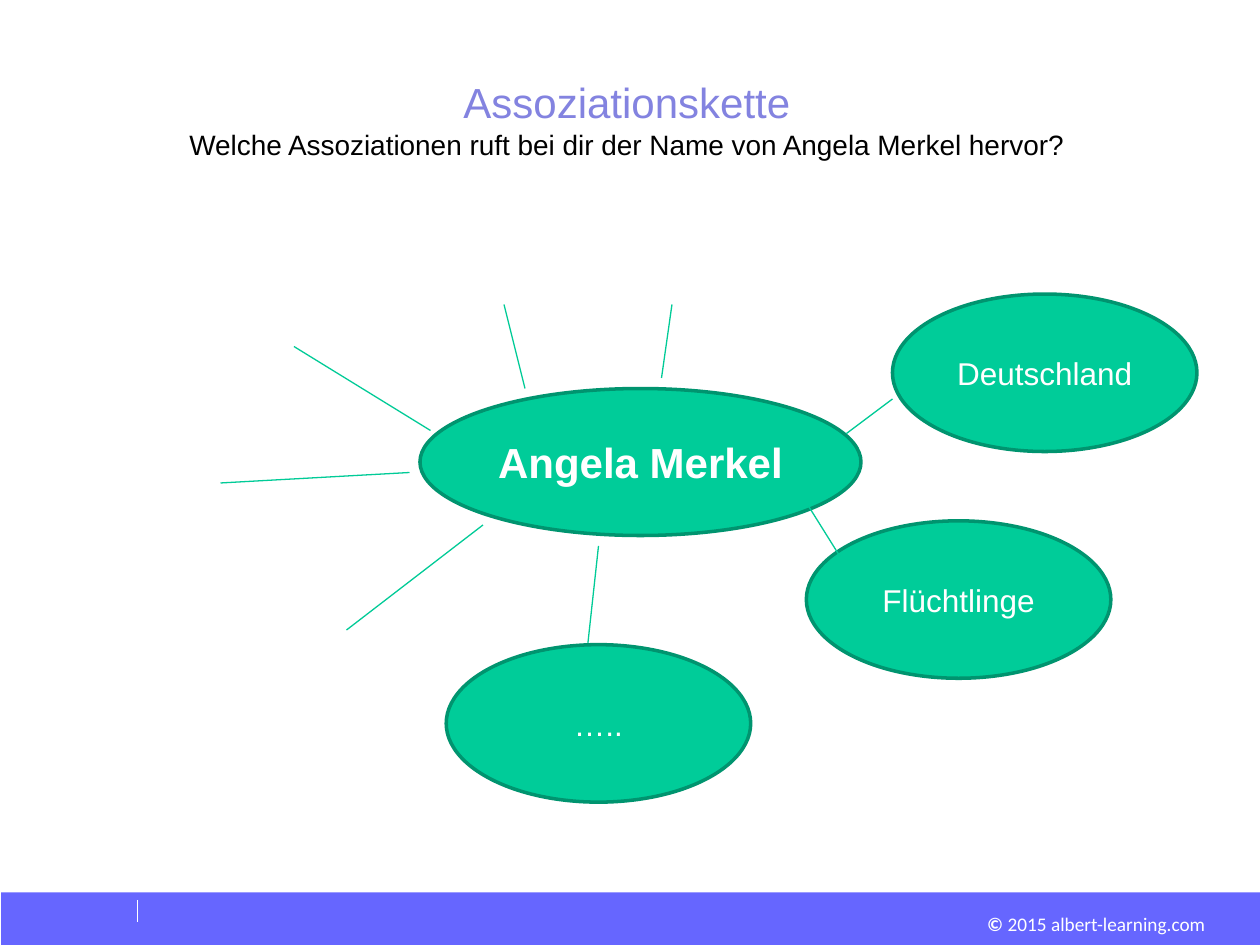
from lxml import etree
from pptx import Presentation, util as u
from pptx.dml.color import RGBColor
from pptx.enum import shapes, text
from pptx.oxml import ns

# Grid of 120 columns by 90 rows, twelve to the inch
WIDTH, HEIGHT = u.Inches(10), u.Inches(7.5)
COLUMNS, ROWS = 120, 90

GREEN, DARK_GREEN, RAY_GREEN = "00CC99", "00946F", "00CB97"
VIOLET, LILAC, WHITE, BLACK = "6666FF", "8383E0", "FFFFFF", "000000"

# Bubbles: words, (column, row, columns, rows)
CENTRE = ("Angela Merkel", (40, 37, 42, 14))
IDEAS = [
    ("Deutschland", (85, 28, 29, 15)),
    ("Flüchtlinge", (76.8, 49.6, 29, 15)),
    ("…..", (42.5, 61.4, 29, 15)),
]
# Lines: from column, row to column, row
RAYS = [
    (28, 33, 41, 41),
    (21, 46, 39, 45),
    (33, 60, 46, 50),
    (48, 29, 50, 37),
    (64, 29, 63, 36),
    (57, 52, 55.8, 63),
]
LINKS = [
    (85, 38, 80.6, 41.3),
    (80, 53, 77, 48.2),
]


def colour(hex_code):
    return RGBColor.from_string(hex_code)


def grid(across, down, *rest):
    """Turn alternating columns and rows into lengths."""
    steps = (WIDTH / COLUMNS, HEIGHT / ROWS)
    return [int(n * steps[i % 2]) for i, n in enumerate((across, down, *rest))]


def style(run, size, hex_code, font="Arial", bold=False):
    run.font.size = u.Pt(size)
    run.font.name = font
    run.font.bold = bold
    run.font.color.rgb = colour(hex_code)


def add_heading(slide, lines):
    title = slide.shapes.title
    title.left, title.top, title.width, title.height = grid(13.7, 6.7, 92, 9.2)
    frame = title.text_frame
    frame.text = "\n".join(words for words, _, _ in lines)
    frame.vertical_anchor = text.MSO_ANCHOR.TOP
    frame.auto_size = text.MSO_AUTO_SIZE.NONE
    for paragraph, (_, size, hex_code) in zip(frame.paragraphs, lines):
        paragraph.alignment = text.PP_ALIGN.CENTER
        paragraph.space_before = u.Pt(0)
        style(paragraph.runs[0], size, hex_code)


def add_bubble(slide, words, place, size=18, bold=False):
    bubble = slide.shapes.add_shape(shapes.MSO_SHAPE.OVAL, *grid(*place))
    bubble.shadow.inherit = False
    bubble.fill.solid()
    bubble.fill.fore_color.rgb = colour(GREEN)
    bubble.line.color.rgb = colour(DARK_GREEN)
    bubble.line.width = u.Pt(2)
    frame = bubble.text_frame
    frame.text = words
    frame.vertical_anchor = text.MSO_ANCHOR.MIDDLE
    frame.paragraphs[0].alignment = text.PP_ALIGN.CENTER
    style(frame.paragraphs[0].runs[0], size, WHITE, bold=bold)


def add_line(slide, ends, hex_code=RAY_GREEN):
    line = slide.shapes.add_connector(
        shapes.MSO_CONNECTOR.STRAIGHT, *grid(*ends))
    line.line.color.rgb = colour(hex_code)
    line.line.width = u.Pt(0.75)
    etree.SubElement(line._element.spPr, ns.qn("a:effectLst"))


def add_footer(slide):
    band = slide.shapes.add_shape(
        shapes.MSO_SHAPE.RECTANGLE, *grid(0.1, 85, 119.9, 5))
    band.shadow.inherit = False
    band.fill.solid()
    band.fill.fore_color.rgb = colour(VIOLET)
    band.line.fill.background()
    add_line(slide, (13.1, 85.7, 13.1, 87.8), WHITE)

    notice = slide.shapes.add_textbox(*grid(93.5, 86.9, 21.3, 2.3))
    frame = notice.text_frame
    frame.word_wrap = True
    frame.margin_left = frame.margin_right = 0
    frame.margin_top = frame.margin_bottom = 0
    paragraph = frame.paragraphs[0]
    paragraph.alignment = text.PP_ALIGN.RIGHT
    for words, bold in (("© ", True), ("2015 albert-learning.com", False)):
        run = paragraph.add_run()
        run.text = words
        style(run, 11, WHITE, "Calibri", bold)


def main():
    deck = Presentation()
    deck.slide_width, deck.slide_height = WIDTH, HEIGHT
    slide = deck.slides.add_slide(deck.slide_layouts[5])

    # Footer and heading
    add_footer(slide)
    add_heading(slide, [
        ("Assoziationskette", 24, LILAC),
        ("Welche Assoziationen ruft bei dir der Name von Angela Merkel hervor?",
         16, BLACK),
    ])

    # Rays lie behind the ideas, links in front of them
    add_bubble(slide, *CENTRE, size=24, bold=True)
    for ray in RAYS:
        add_line(slide, ray)
    for words, place in IDEAS:
        add_bubble(slide, words, place)
    for link in LINKS:
        add_line(slide, link)

    deck.save("out.pptx")


if __name__ == "__main__":
    main()
